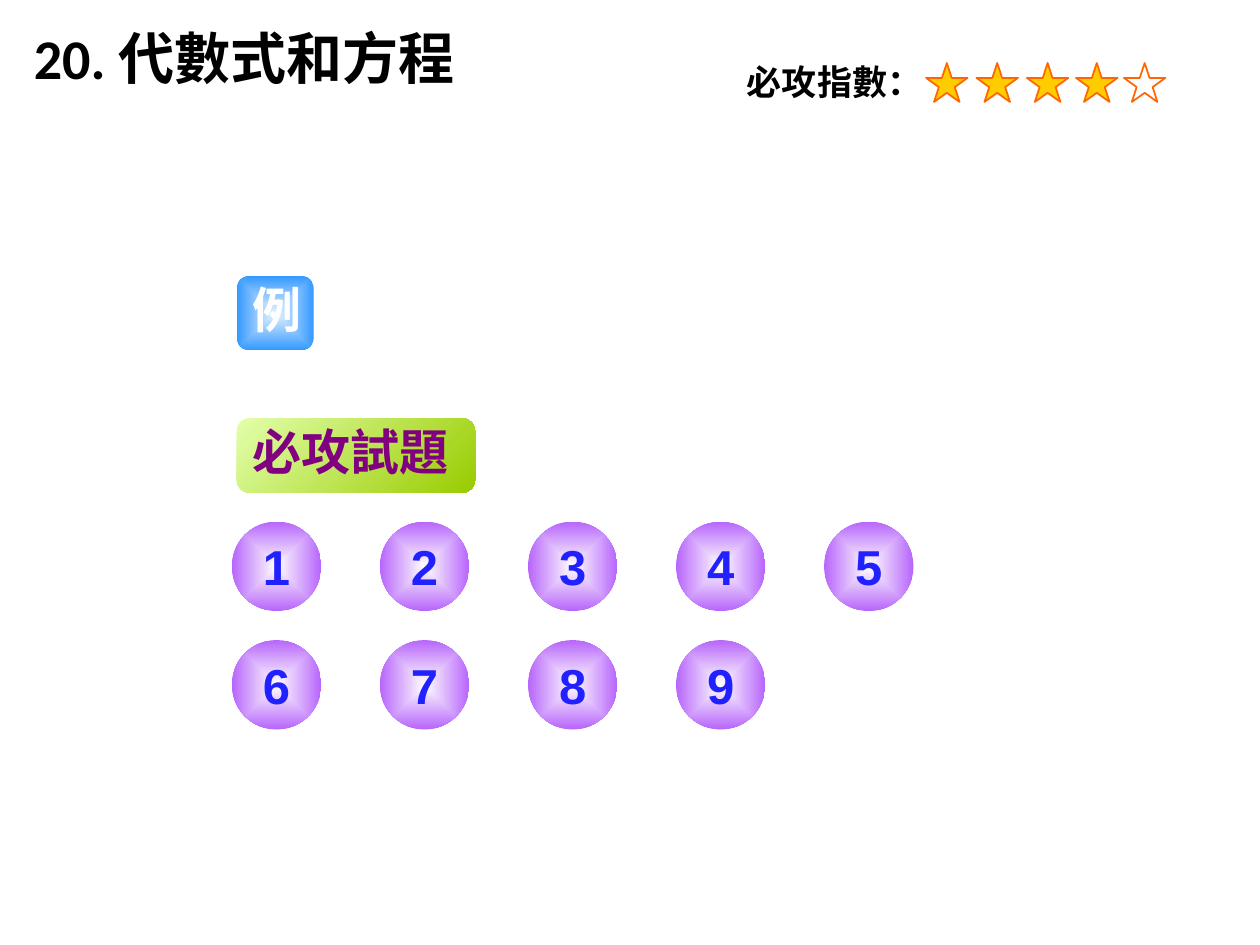
import pptx
import pptx.dml.color
import pptx.enum.shapes
import pptx.enum.text
import pptx.oxml
import pptx.oxml.ns
import pptx.util
from pptx.util import Inches

SHAPES = pptx.enum.shapes.MSO_SHAPE
CENTER = pptx.enum.text.PP_ALIGN.CENTER
MIDDLE = pptx.enum.text.MSO_ANCHOR.MIDDLE
LEFT = pptx.enum.text.PP_ALIGN.LEFT
TOP = pptx.enum.text.MSO_ANCHOR.TOP


def color(hex_value):
    return pptx.dml.color.RGBColor.from_string(hex_value)


class ExerciseMenu:
    """Style and current slide of the exercise menu."""

    heading_font = "Noto Sans CJK TC"
    button_font = "Noto Sans CJK SC"
    star_fill, star_line = "FFCC00", "FF6600"
    number_font, number_color = "Arial", "2121FF"
    number_gradient = ("FFFFFF", "B765FB")

    def __init__(self, presentation):
        self.slide = presentation.slides.add_slide(presentation.slide_layouts[6])

    def set_text(self, shape, text, size, text_color, latin, east_asian,
                 align=LEFT, anchor=TOP, wrap=True, line_spacing=None):
        frame = shape.text_frame
        frame.word_wrap = wrap
        frame.vertical_anchor = anchor
        paragraph = frame.paragraphs[0]
        paragraph.text = text
        paragraph.alignment = align
        if line_spacing:
            paragraph.line_spacing = pptx.util.Pt(line_spacing)
        font = paragraph.font
        font.size = pptx.util.Pt(size)
        font.bold = True
        font.color.rgb = color(text_color)
        font.name = latin
        typeface = pptx.oxml.parse_xml(
            f'<a:ea {pptx.oxml.ns.nsdecls("a")} typeface="{east_asian}"/>')
        font._rPr.append(typeface)

    def label(self, text, left, top, width, height, size, latin):
        box = self.slide.shapes.add_textbox(
            Inches(left), Inches(top), Inches(width), Inches(height))
        self.set_text(box, text, size, "000000", latin, self.heading_font)

    def shape(self, kind, left, top, width, height):
        shape = self.slide.shapes.add_shape(
            kind, Inches(left), Inches(top), Inches(width), Inches(height))
        shape.shadow.inherit = False
        return shape

    def star(self, left, fill):
        star = self.shape(SHAPES.STAR_5_POINT, left, 0.5, 0.33, 0.31)
        star.fill.solid()
        star.fill.fore_color.rgb = color(fill)
        star.line.color.rgb = color(self.star_line)
        star.line.width = pptx.util.Pt(1)

    def gradient(self, shape, colors, from_center):
        """Fill without outline, from the centre or from the top left corner."""
        shape.line.fill.background()
        shape.fill.gradient()
        shape.fill.gradient_angle = 315
        for stop, hex_value in zip(shape.fill.gradient_stops, colors):
            stop.color.rgb = color(hex_value)
        if from_center:
            linear = shape._element.spPr.find(".//" + pptx.oxml.ns.qn("a:lin"))
            linear.getparent().replace(linear, pptx.oxml.parse_xml(
                f'<a:path {pptx.oxml.ns.nsdecls("a")} path="shape">'
                '<a:fillToRect l="50000" t="50000" r="50000" b="50000"/></a:path>'))

    def button(self, text, top, width, colors, text_color, from_center, align):
        button = self.shape(SHAPES.ROUNDED_RECTANGLE, 1.88, top, width, 0.59)
        button.adjustments[0] = 0.17
        self.gradient(button, colors, from_center)
        self.set_text(button, text, 28, text_color, self.button_font,
                      self.button_font, align, line_spacing=30)

    def number(self, number, left, top):
        circle = self.shape(SHAPES.OVAL, left, top, 0.71, 0.71)
        self.gradient(circle, self.number_gradient, from_center=True)
        self.set_text(circle, str(number), 28, self.number_color, self.number_font,
                      self.number_font, CENTER, MIDDLE, wrap=False)


def main():
    presentation = pptx.Presentation()
    presentation.slide_width = Inches(10)
    presentation.slide_height = Inches(7.5)
    menu = ExerciseMenu(presentation)

    menu.label("20. 代數式和方程", 0.17, 0.14, 6.56, 0.82, 32, "Calibri")
    menu.label("必攻指數：", 5.83, 0.43, 1.89, 0.46, 20, menu.heading_font)
    rating = 4
    for index, left in enumerate((7.35, 7.75, 8.15, 8.54, 8.92)):
        menu.star(left, menu.star_fill if index < rating else "FFFFFF")

    menu.button("例", 2.19, 0.61, ("E5F2FF", "3399FF"), "FFFFFF", True, CENTER)
    menu.button("必攻試題", 3.32, 1.89, ("E3FFAB", "99CC00"), "800080", False, LEFT)

    columns, first_left, last_left = 5, 1.84, 6.54
    column_step = (last_left - first_left) / (columns - 1)
    for index in range(9):
        row, column = divmod(index, columns)
        menu.number(index + 1, first_left + column * column_step, 4.14 + row * 0.94)

    presentation.save("out.pptx")


if __name__ == "__main__":
    main()
